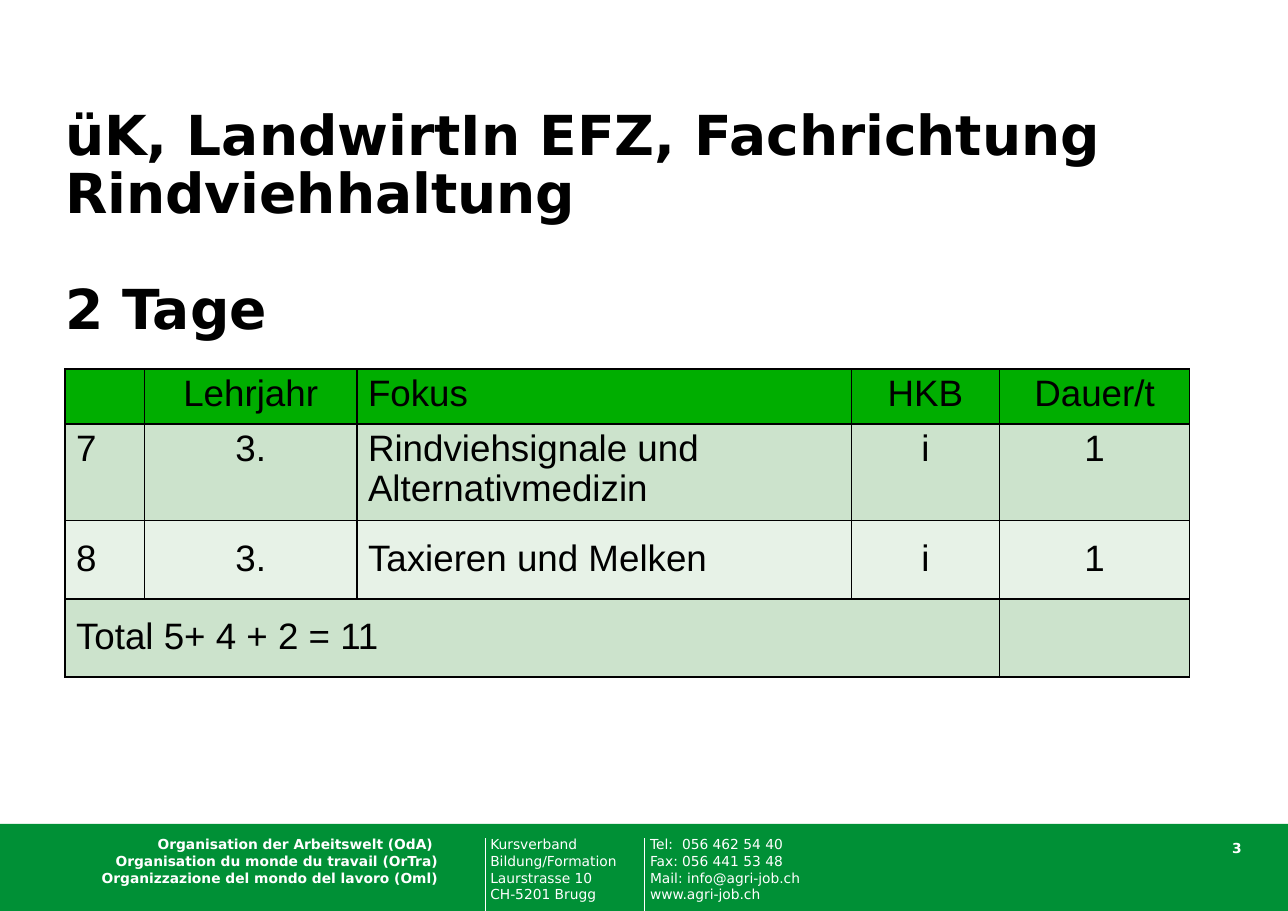
from dataclasses import dataclass

from lxml import etree
from pptx import Presentation
from pptx.dml.color import RGBColor
from pptx.enum.shapes import MSO_CONNECTOR, MSO_SHAPE
from pptx.enum.text import MSO_ANCHOR, PP_ALIGN
from pptx.oxml.ns import qn
from pptx.util import Emu, Inches, Pt

LEFT, CENTER, RIGHT = PP_ALIGN.LEFT, PP_ALIGN.CENTER, PP_ALIGN.RIGHT
TOP, MIDDLE = MSO_ANCHOR.TOP, MSO_ANCHOR.MIDDLE
RECTANGLE, STRAIGHT = MSO_SHAPE.RECTANGLE, MSO_CONNECTOR.STRAIGHT

SANS, TABLE_FONT = "DejaVu Sans", "Arial"
WHITE, BLACK, BAND_GREEN = "FFFFFF", "000000", "009036"
HEAD_GREEN, ROW_DARK, ROW_LIGHT = "00AE00", "CCE3CC", "E7F2E7"

prs = Presentation()
prs.slide_width, prs.slide_height = Inches(11.69), Inches(8.27)
s = prs.slides.add_slide(prs.slide_layouts[6])


@dataclass
class TextBlock:
    """A text box; its place and size are percentages of the slide."""
    left: float
    top: float
    width: float
    height: float
    lines: list[str]
    size: float = 9
    color: str = WHITE
    bold: bool = False
    align: PP_ALIGN = LEFT
    wrap: bool = False
    spacing: float | Pt = 1.0
    last_gap: float = 0
    tab: float = 0


@dataclass
class TableRow:
    height: float
    fill: str
    anchor: MSO_ANCHOR
    texts: list[str]


def x(percent: float) -> Emu:
    return Emu(round(prs.slide_width * percent / 100))


def y(percent: float) -> Emu:
    return Emu(round(prs.slide_height * percent / 100))


def rgb(value: str) -> RGBColor:
    return RGBColor.from_string(value)


def style(p, font: str, size: float, color: str, bold: bool = False) -> None:
    p.font.name, p.font.size, p.font.bold = font, Pt(size), bold
    p.font.color.rgb = rgb(color)


def add_text(block: TextBlock) -> None:
    sp = s.shapes.add_textbox(x(block.left), y(block.top), x(block.width), y(block.height))
    tf = sp.text_frame
    tf.margin_left = tf.margin_right = tf.margin_top = tf.margin_bottom = 0
    tf.word_wrap = block.wrap
    tf.text = "\n".join(block.lines)
    for p in tf.paragraphs:
        p.alignment, p.line_spacing = block.align, block.spacing
        if block.tab:
            tabs = etree.SubElement(p._p.get_or_add_pPr(), qn("a:tabLst"))
            etree.SubElement(tabs, qn("a:tab"), pos=str(Inches(block.tab)), algn="l")
        style(p, SANS, block.size, block.color, block.bold)
    if block.last_gap:
        tf.paragraphs[-1].space_before = Pt(block.last_gap)


def add_divider(left: float) -> None:
    line = s.shapes.add_connector(STRAIGHT, x(left), y(92.02), x(left), y(100))
    line.line.color.rgb, line.line.width = rgb(WHITE), Pt(0.75)
    etree.SubElement(line._element.spPr, qn("a:effectLst"))


def add_borders(cell) -> None:
    tc_pr = cell._tc.get_or_add_tcPr()
    for side in ("lnL", "lnR", "lnT", "lnB"):
        ln = etree.SubElement(tc_pr, qn(f"a:{side}"), w=str(Pt(1)))
        fill = etree.SubElement(ln, qn("a:solidFill"))
        etree.SubElement(fill, qn("a:srgbClr"), val=BLACK)


def add_course_table(rows: list[TableRow], widths: list[float], aligns: list[PP_ALIGN]) -> None:
    frame = s.shapes.add_table(len(rows), len(widths), x(5.05), y(40.5),
                               x(sum(widths)), y(sum(row.height for row in rows)))
    table = frame.table
    table.first_row = table.horz_banding = False
    for column, width in zip(table.columns, widths):
        column.width = x(width)
    for i, row in enumerate(rows):
        table.rows[i].height = y(row.height)
        for j, (text, align) in enumerate(zip(row.texts, aligns)):
            cell = table.cell(i, j)
            add_borders(cell)
            cell.fill.solid()
            cell.fill.fore_color.rgb = rgb(row.fill)
            cell.vertical_anchor = row.anchor
            cell.text = text
            p = cell.text_frame.paragraphs[0]
            p.alignment, p.line_spacing = align, 0.97
            style(p, TABLE_FONT, 24, BLACK)
    # The total spans every column but the last
    table.cell(len(rows) - 1, 0).merge(table.cell(len(rows) - 1, len(widths) - 2))


# Footer band with dividers
band = s.shapes.add_shape(RECTANGLE, x(0), y(90.45), x(100), y(9.55))
band.shadow.inherit = False
band.fill.solid()
band.fill.fore_color.rgb = rgb(BAND_GREEN)
band.line.fill.background()
for divider in (37.72, 50.04):
    add_divider(divider)

# Footer texts, page number and title
TEXTS = [
    TextBlock(38.07, 91.78, 9.92, 7.26,
              ["Kursverband", "Bildung/Formation", "Laurstrasse 10", "CH-5201 Brugg"]),
    TextBlock(50.47, 91.78, 11.98, 7.26,
              ["Tel:\t056 462 54 40", "Fax:\t056 441 53 48",
               "Mail: info@agri-job.ch", "www.agri-job.ch"], tab=0.29),
    TextBlock(5.13, 91.78, 28.83, 5.44,
              ["Organisation der Arbeitswelt (OdA) ",
               "Organisation du monde du travail (OrTra)",
               "Organizzazione del mondo del lavoro (Oml)"],
              bold=True, align=RIGHT, wrap=True),
    TextBlock(93.41, 92.38, 3, 1.7, ["3"], bold=True, align=RIGHT, wrap=True, spacing=0.9),
    TextBlock(5.05, 11.85, 90, 12.45,
              ["üK, LandwirtIn EFZ, Fachrichtung Rindviehhaltung", "2 Tage"],
              size=36, color=BLACK, bold=True, wrap=True, spacing=Pt(38), last_gap=38),
]
for block in TEXTS:
    add_text(block)

# Course table
ROWS = [
    TableRow(5.93, HEAD_GREEN, TOP, ["", "Lehrjahr", "Fokus", "HKB", "Dauer/t"]),
    TableRow(10.28, ROW_DARK, TOP, ["7", "3.", "Rindviehsignale und Alternativmedizin", "i", "1"]),
    TableRow(8.59, ROW_LIGHT, MIDDLE, ["8", "3.", "Taxieren und Melken", "i", "1"]),
    TableRow(8.59, ROW_DARK, MIDDLE, ["Total 5+ 4 + 2 = 11", "", "", "", ""]),
]
add_course_table(ROWS, [6.16, 16.51, 38.41, 11.46, 14.8], [LEFT, CENTER, LEFT, CENTER, CENTER])

prs.save("out.pptx")
